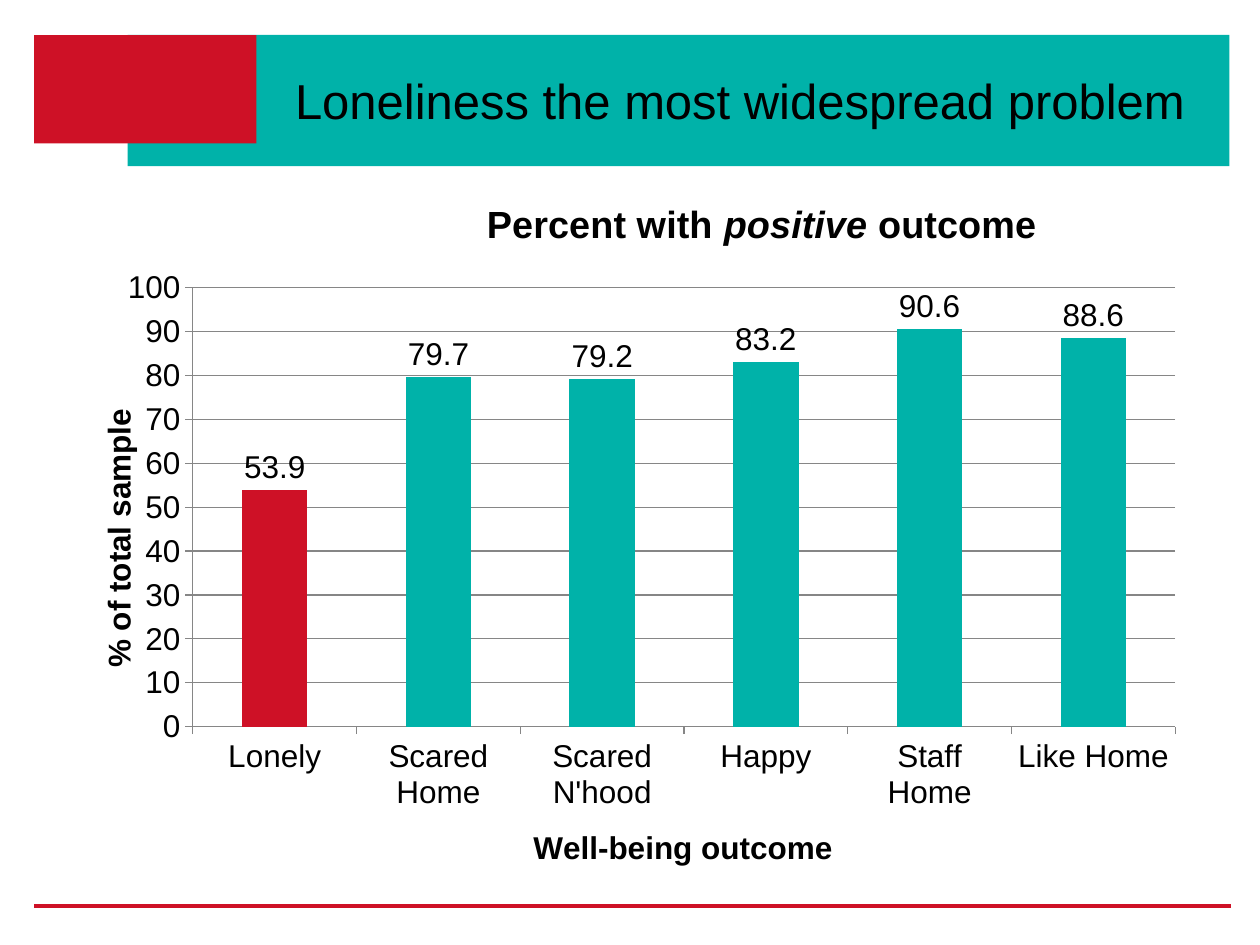
from lxml import etree
from pptx import Presentation
from pptx.chart.data import CategoryChartData
from pptx.dml.color import RGBColor
from pptx.enum import chart as charts, shapes, text
from pptx.oxml import parse_xml
from pptx.oxml.ns import nsdecls, qn
from pptx.util import Pt

TEAL = RGBColor(0x00, 0xB2, 0xA9)
RED = RGBColor(0xCE, 0x11, 0x26)
BLACK = RGBColor(0, 0, 0)
GREY = RGBColor(0x86, 0x86, 0x86)
FONT = "Arial"

OUTCOMES = {
    "Lonely": 53.9,
    "Scared Home": 79.7,
    "Scared N'hood": 79.2,
    "Happy": 83.2,
    "Staff Home": 90.6,
    "Like Home": 88.6,
}


def style(font, size, bold=False, italic=False):
    font.name, font.size = FONT, Pt(size)
    font.bold, font.italic = bold, italic
    font.color.rgb = BLACK


def add_block(page, left, top, width, height, colour):
    block = page.shapes.add_shape(shapes.MSO_SHAPE.RECTANGLE,
                                  Pt(left), Pt(top), Pt(width), Pt(height))
    block.shadow.inherit = False
    block.fill.solid()
    block.fill.fore_color.rgb = colour
    block.line.fill.background()


def add_header(page, left, top, width, height):
    """Teal band with a red corner block and the slide title on top."""
    indent = 53.5
    add_block(page, left + indent, top, width - indent, height, TEAL)
    add_block(page, left, top, 127, 62, RED)

    title = page.shapes.title
    page.shapes._spTree.append(title._element)
    title.left, title.top = Pt(left + 131), Pt(top + 1.5)
    title.width, title.height = Pt(533.5), Pt(56)
    frame = title.text_frame
    frame.word_wrap = True
    frame.auto_size = text.MSO_AUTO_SIZE.NONE
    frame.vertical_anchor = text.MSO_ANCHOR.BOTTOM
    para = frame.paragraphs[0]
    para.alignment = text.PP_ALIGN.RIGHT
    para.line_spacing = Pt(25)
    span = para.add_run()
    span.text = "Loneliness the most widespread problem"
    style(span.font, 28)


def add_footer_rule(page, left, top, width):
    rule = page.shapes.add_connector(shapes.MSO_CONNECTOR.STRAIGHT,
                                     Pt(left), Pt(top), Pt(left + width), Pt(top))
    rule.line.color.rgb = RED
    rule.line.width = Pt(2.25)
    etree.SubElement(rule._element.spPr, qn("a:effectLst"))


def set_layout(element, index, target=None, **fractions):
    """Fix a chart part at fractions of the chart area."""
    for old in element.findall(qn("c:layout")):
        element.remove(old)
    parts = [("layoutTarget", target)] if target else []
    parts += [("xMode", "edge"), ("yMode", "edge"), *fractions.items()]
    body = "".join(f'<c:{name} val="{value}"/>' for name, value in parts)
    element.insert(index, parse_xml(
        f'<c:layout {nsdecls("c")}><c:manualLayout>{body}</c:manualLayout></c:layout>'))


def add_chart_text(title, spans, size, x, y):
    """Write (wording, italic) spans into a chart or axis title."""
    para = title.text_frame.paragraphs[0]
    for wording, italic in spans:
        span = para.add_run()
        span.text = wording
        style(span.font, size, bold=True, italic=italic)
    set_layout(title._element, 1, x=x, y=y)


def format_axis(axis, wording, x, y):
    axis.major_tick_mark = charts.XL_TICK_MARK.OUTSIDE
    axis.minor_tick_mark = charts.XL_TICK_MARK.NONE
    axis.format.line.color.rgb = GREY
    style(axis.tick_labels.font, 18)
    add_chart_text(axis.axis_title, [(wording, False)], 18, x, y)


def add_outcome_chart(page, left, top, width, height):
    data = CategoryChartData()
    data.categories = OUTCOMES.keys()
    data.add_series("Series 1", OUTCOMES.values())
    chart = page.shapes.add_chart(charts.XL_CHART_TYPE.COLUMN_CLUSTERED, Pt(left),
                                  Pt(top), Pt(width), Pt(height), data).chart
    style(chart.font, 18)
    chart.has_legend = False
    chart.has_title = True
    add_chart_text(chart.chart_title,
                   [("Percent with ", False), ("positive", True), (" outcome", False)],
                   21.6, 0.37, 0.03)
    chart.chart_title.include_in_layout = False

    format_axis(chart.category_axis, "Well-being outcome", 0.41, 0.91)
    scale = chart.value_axis
    format_axis(scale, "% of total sample", 0.02, 0.32)
    turned = next(scale.axis_title._element.iter(qn("a:bodyPr")))
    turned.set("rot", "-5400000")
    turned.set("vert", "horz")
    scale.minimum_scale, scale.maximum_scale, scale.major_unit = 0, 100, 10
    scale.major_gridlines.format.line.color.rgb = GREY

    plot = chart.plots[0]
    plot.gap_width = 150
    plot.vary_by_categories = False
    bars = plot.series[0]
    for part, colour in ((bars, TEAL), (bars.points[0], RED)):
        part.format.fill.solid()
        part.format.fill.fore_color.rgb = colour
    plot.has_data_labels = True
    labels = plot.data_labels
    labels.show_value = True
    labels.position = charts.XL_LABEL_POSITION.OUTSIDE_END
    style(labels.font, 18)
    set_layout(chart._chartSpace.chart.plotArea, 0, "inner",
               x=0.11, y=0.157, w=0.88, h=0.62)


def main():
    deck = Presentation()
    deck.slide_width, deck.slide_height = Pt(720), Pt(540)
    page = deck.slides.add_slide(deck.slide_layouts[5])
    add_footer_rule(page, 19.5, 517.5, 684)
    add_header(page, 19.5, 20, 683, 75)
    add_outcome_chart(page, 40, 101, 638, 404.5)
    deck.save("out.pptx")


if __name__ == "__main__":
    main()
